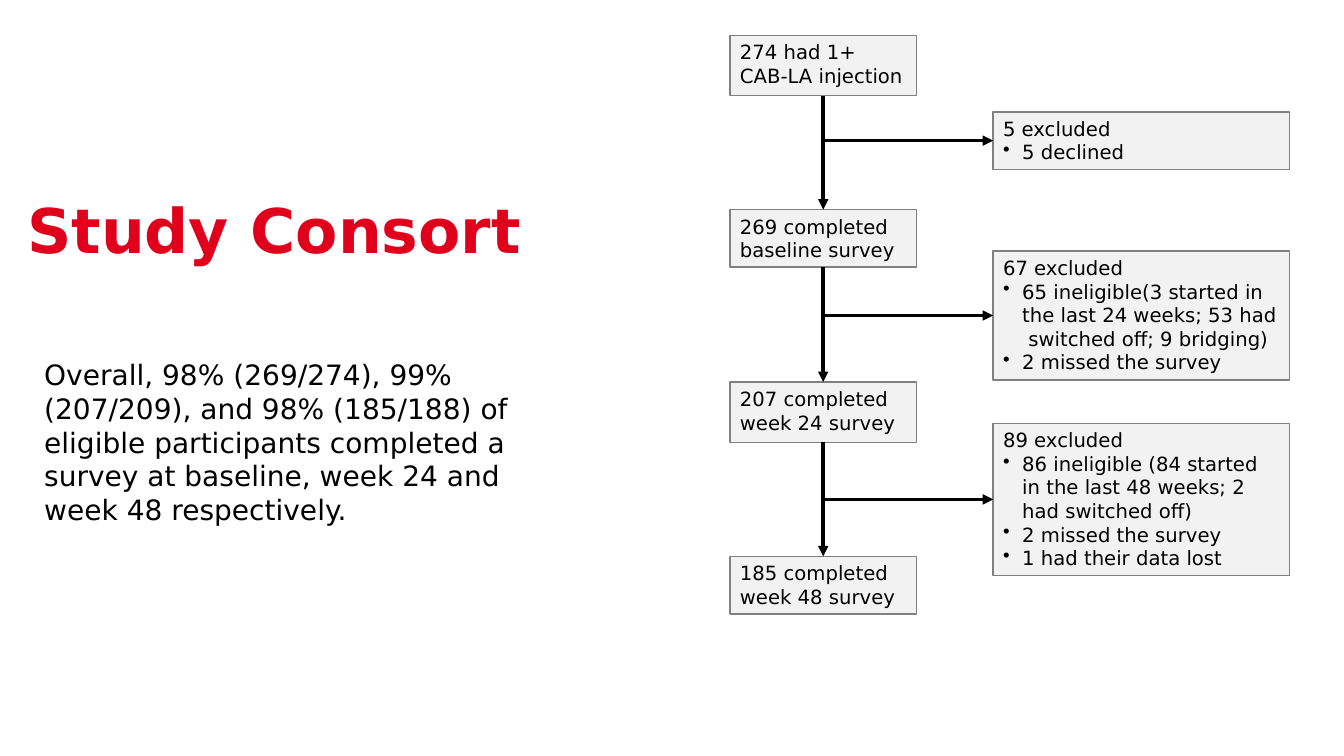
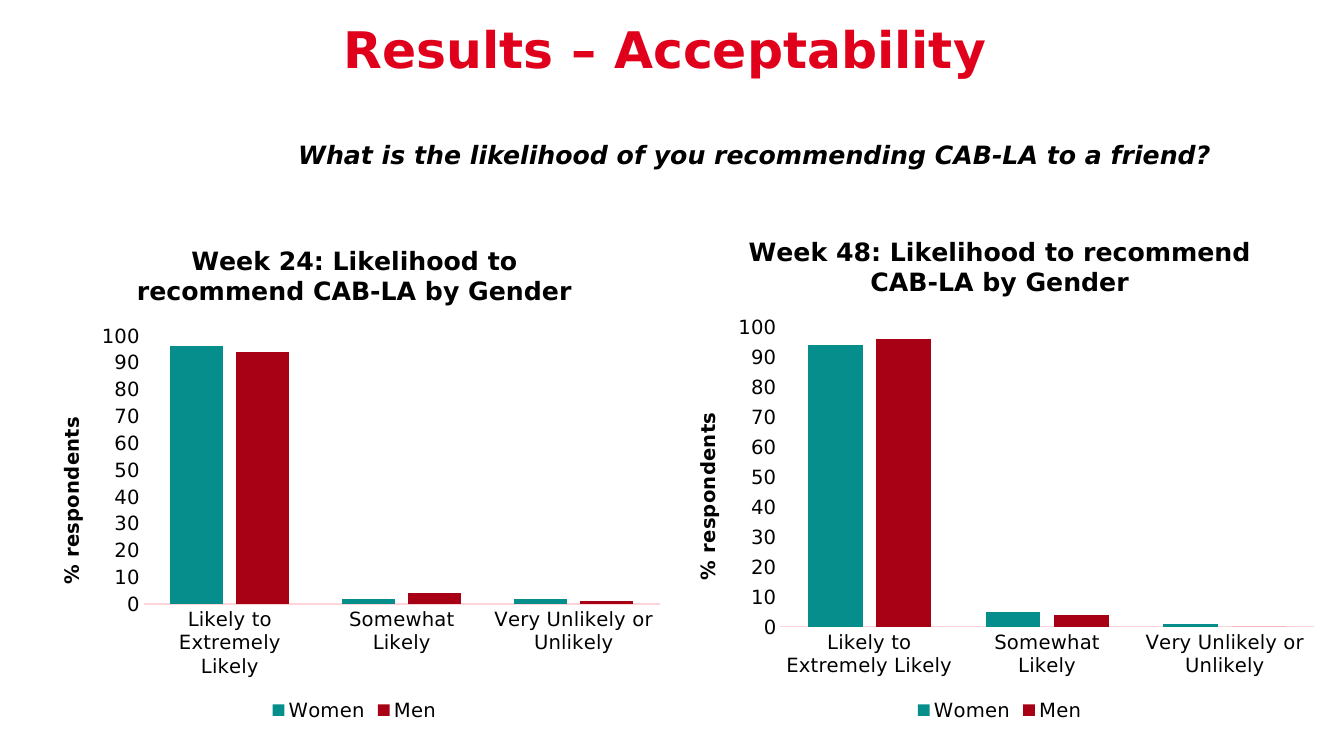
from dataclasses import dataclass

from lxml.etree import SubElement
from pptx import Presentation
from pptx.chart.data import CategoryChartData
from pptx.dml.color import RGBColor
from pptx.enum.chart import XL_CHART_TYPE as ChartType
from pptx.enum.chart import XL_LEGEND_POSITION as LegendPosition
from pptx.enum.chart import XL_TICK_MARK as TickMark
from pptx.enum.shapes import MSO_CONNECTOR as Connector
from pptx.enum.shapes import MSO_SHAPE as Shape
from pptx.enum.text import MSO_ANCHOR as Anchor
from pptx.enum.text import MSO_AUTO_SIZE as AutoSize
from pptx.enum.text import PP_ALIGN as Align
from pptx.oxml.ns import qn
from pptx.util import Inches, Pt


@dataclass(frozen=True)
class Theme:
    font: str = "DejaVu Sans"
    title: str = "E0001B"
    text: str = "000000"
    box_fill: str = "F2F2F2"
    box_line: str = "808080"
    axis_line: str = "FFD4D9"
    women: str = "068E8C"
    men: str = "A80014"
    large_title_size: int = 44
    title_size: int = 36
    body_size: int = 20
    heading_size: int = 18
    label_size: int = 14


THEME = Theme()
TOP, LEFT, BOTTOM = 0, 1, 2
STAGE_LEFT, STAGE_WIDTH = 7.24, 1.85
EXCLUDED_LEFT, EXCLUDED_WIDTH = 9.85, 2.94
BULLET_INDENT = Inches(0.19)

STAGES = [
    ("274 had 1+ CAB-LA injection", 0.35, 0.6),
    ("269 completed baseline survey", 2.08, 0.57),
    ("207 completed week 24 survey", 3.79, 0.6),
    ("185 completed week 48 survey", 5.52, 0.57),
]
EXCLUSIONS = [
    ("5 excluded", ["5 declined"], 1.11, 0.57),
    ("67 excluded",
     ["65 ineligible(3 started in the last 24 weeks; 53 had  switched off; 9 bridging)",
      "2 missed the survey"], 2.49, 1.28),
    ("89 excluded",
     ["86 ineligible (84 started in the last 48 weeks; 2 had switched off)",
      "2 missed the survey", "1 had their data lost"], 4.2, 1.51),
]
LIKELIHOODS = ["Likely to Extremely Likely", "Somewhat Likely", "Very Unlikely or Unlikely"]


def inches(*lengths):
    return [Inches(length) for length in lengths]


def rgb(color):
    return RGBColor.from_string(color)


def style_font(font, size, color=THEME.text, bold=False, italic=False):
    font.name = THEME.font
    font.size = Pt(size)
    font.color.rgb = rgb(color)
    font.bold = bold
    font.italic = italic


def add_bullet(paragraph):
    properties = paragraph._p.get_or_add_pPr()
    properties.set("marL", str(BULLET_INDENT))
    properties.set("indent", str(-BULLET_INDENT))
    SubElement(properties, qn("a:buChar")).set("char", "•")


def write_text(frame, text, bullets=(), line_spacing=None, space_after=None,
               auto_size=AutoSize.SHAPE_TO_FIT_TEXT, **font_format):
    frame.word_wrap = True
    frame.auto_size = auto_size
    frame.vertical_anchor = Anchor.TOP
    for index, content in enumerate([text, *bullets]):
        paragraph = frame.add_paragraph() if index else frame.paragraphs[0]
        if index:
            add_bullet(paragraph)
        paragraph.alignment = Align.LEFT
        if line_spacing:
            paragraph.line_spacing = line_spacing
        if space_after:
            paragraph.space_after = Pt(space_after)
        run = paragraph.add_run()
        run.text = content
        style_font(run.font, **font_format)


def add_titled_slide(presentation, text, bounds, size):
    slide = presentation.slides.add_slide(presentation.slide_layouts[5])
    title = slide.shapes.title
    title.left, title.top, title.width, title.height = inches(*bounds)
    write_text(title.text_frame, text, size=size, color=THEME.title, bold=True,
               line_spacing=0.9, auto_size=AutoSize.NONE)
    return slide


def add_text_box(slide, text, bounds, **text_format):
    text_box = slide.shapes.add_textbox(*inches(*bounds))
    write_text(text_box.text_frame, text, **text_format)


def add_box(slide, text, bounds, bullets=()):
    box = slide.shapes.add_shape(Shape.RECTANGLE, *inches(*bounds))
    box.shadow.inherit = False
    box.fill.solid()
    box.fill.fore_color.rgb = rgb(THEME.box_fill)
    box.line.color.rgb = rgb(THEME.box_line)
    box.line.width = Pt(1)
    write_text(box.text_frame, text, bullets, size=THEME.label_size)
    return box


def add_arrow(slide, start, end):
    arrow = slide.shapes.add_connector(Connector.STRAIGHT, *start, *end)
    arrow.line.color.rgb = rgb(THEME.text)
    arrow.line.width = Pt(2.5)
    SubElement(arrow.line._get_or_add_ln(), qn("a:tailEnd")).set("type", "triangle")
    SubElement(arrow._element.spPr, qn("a:effectLst"))
    return arrow


def write_chart_title(title, text, size):
    run = title.text_frame.paragraphs[0].add_run()
    run.text = text
    style_font(run.font, size, bold=True)


def format_axes(chart):
    for axis in (chart.category_axis, chart.value_axis):
        axis.major_tick_mark = axis.minor_tick_mark = TickMark.NONE
        axis.has_major_gridlines = False
        style_font(axis.tick_labels.font, THEME.label_size)
    category_line = chart.category_axis.format.line
    category_line.color.rgb = rgb(THEME.axis_line)
    category_line.width = Pt(0.75)
    value_axis = chart.value_axis
    value_axis.format.line.fill.background()
    value_axis.minimum_scale, value_axis.maximum_scale = 0, 100
    value_axis.major_unit = 10
    write_chart_title(value_axis.axis_title, "% respondents", THEME.label_size)
    value_axis.axis_title.text_frame._txBody.bodyPr.set("rot", "-5400000")


def add_gender_chart(slide, week, bounds, women, men):
    data = CategoryChartData()
    data.categories = LIKELIHOODS
    data.add_series("Women", women)
    data.add_series("Men", men)
    chart = slide.shapes.add_chart(ChartType.COLUMN_CLUSTERED, *inches(*bounds), data).chart
    style_font(chart.font, 10)
    chart.has_title = True
    write_chart_title(chart.chart_title,
                      f"Week {week}: Likelihood to recommend CAB-LA by Gender",
                      THEME.heading_size)
    chart.has_legend = True
    chart.legend.position = LegendPosition.BOTTOM
    chart.legend.include_in_layout = False
    style_font(chart.legend.font, THEME.label_size)
    format_axes(chart)
    plot = chart.plots[0]
    plot.gap_width, plot.overlap = 100, -24
    plot.vary_by_categories = False
    for series, color in zip(plot.series, (THEME.women, THEME.men)):
        series.format.fill.solid()
        series.format.fill.fore_color.rgb = rgb(color)


def add_consort_flow(slide):
    stages = [add_box(slide, text, (STAGE_LEFT, top, STAGE_WIDTH, height))
              for text, top, height in STAGES]
    center = stages[0].left + stages[0].width // 2
    for upper, lower in zip(stages, stages[1:]):
        arrow = add_arrow(slide, (center, upper.top + upper.height), (center, lower.top))
        arrow.begin_connect(upper, BOTTOM)
        arrow.end_connect(lower, TOP)
    for text, reasons, top, height in EXCLUSIONS:
        box = add_box(slide, text, (EXCLUDED_LEFT, top, EXCLUDED_WIDTH, height), reasons)
        middle = box.top + box.height // 2
        add_arrow(slide, (center, middle), (box.left, middle)).end_connect(box, LEFT)


def build_consort_slide(presentation):
    slide = add_titled_slide(presentation, "Study Consort", (0.17, 1.94, 5.57, 1.26),
                             THEME.large_title_size)
    add_text_box(slide,
                 "Overall, 98% (269/274), 99% (207/209), and 98% (185/188) of eligible "
                 "participants completed a survey at baseline, week 24 and week 48 "
                 "respectively.",
                 (0.34, 3.5, 4.97, 1.78), size=THEME.body_size)
    add_consort_flow(slide)


def build_acceptability_slide(presentation):
    slide = add_titled_slide(presentation, "Results – Acceptability",
                             (3.31, 0.2, 9.85, 1.34), THEME.title_size)
    add_text_box(slide, "What is the likelihood of you recommending CAB-LA to a friend?",
                 (2.86, 1.33, 9.36, 0.4), size=THEME.heading_size, bold=True, italic=True,
                 space_after=6)
    add_gender_chart(slide, 24, (0.36, 2.23, 6.31, 4.97), women=(96, 2, 2), men=(94, 4, 1))
    add_gender_chart(slide, 48, (6.67, 2.14, 6.49, 5.06), women=(94, 5, 1), men=(96, 4, 0))


def main():
    presentation = Presentation()
    presentation.slide_width, presentation.slide_height = inches(13.33, 7.5)
    build_consort_slide(presentation)
    build_acceptability_slide(presentation)
    presentation.save("out.pptx")


if __name__ == "__main__":
    main()
